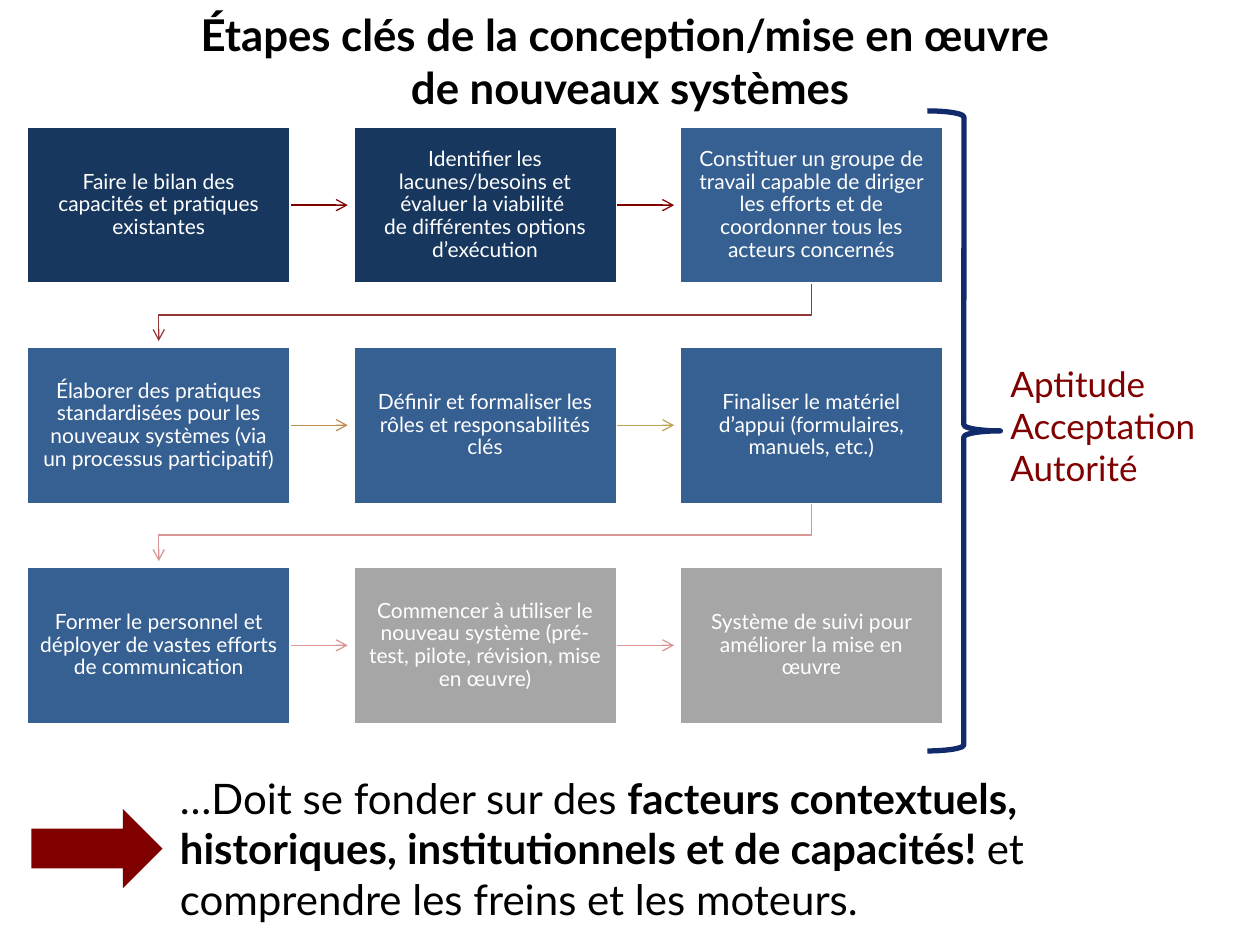
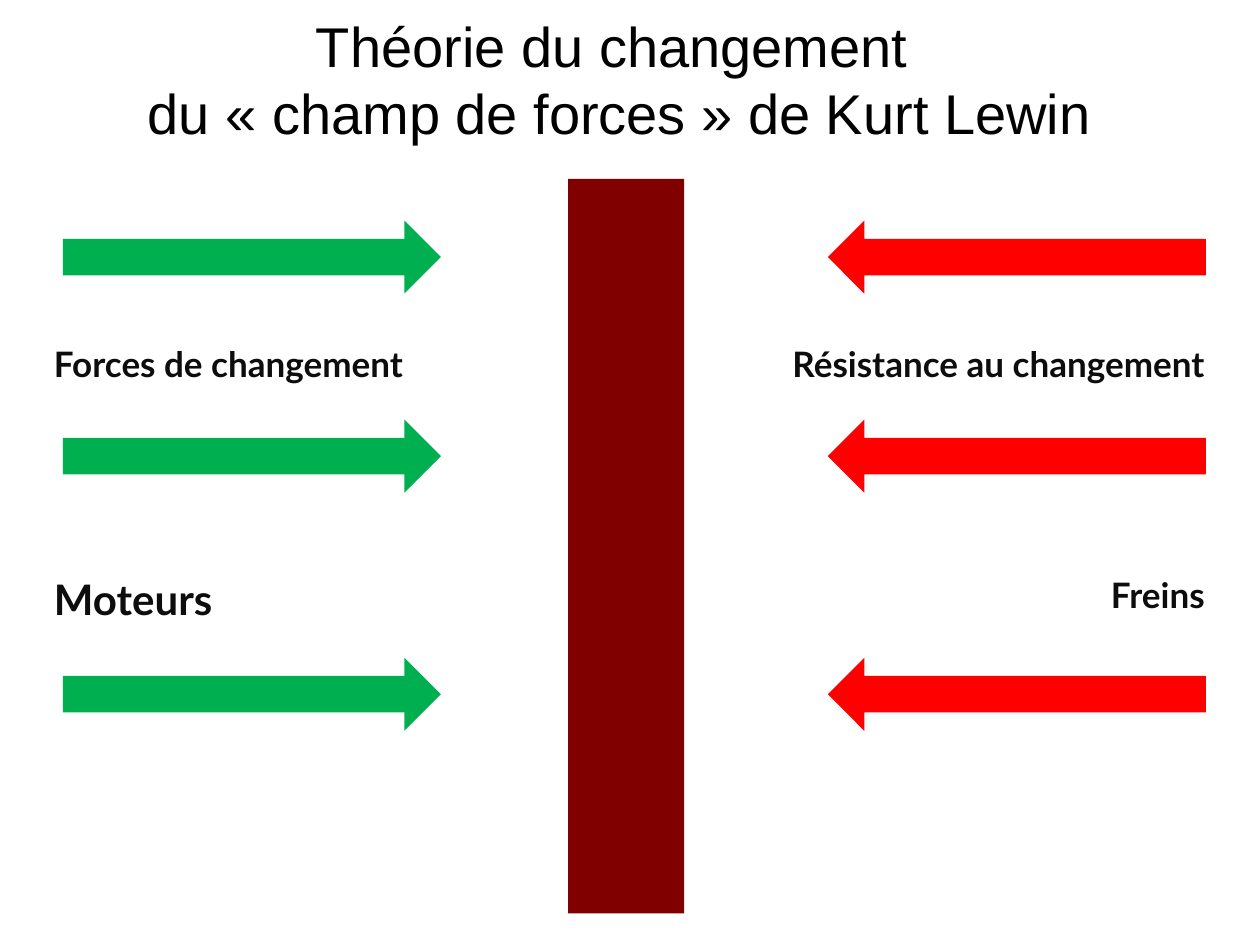
from lxml import etree
from pptx import Presentation
from pptx import util as u
from pptx.dml.color import RGBColor
from pptx.enum import shapes, text
from pptx.oxml.ns import qn

# Slide grid: 10 columns by 7.5 rows, one inch each
COLS, ROWS = 10, 7.5
BODY_FONT, TITLE_FONT = "Lato", "Arial"
MAROON, NAVY, BLUE, GREY = "800000", "17375E", "376092", "A6A6A6"
GREEN, RED, WHITE, BLACK, INK = "00B050", "FF0000", "FFFFFF", "000000", "0D0D0D"
BRACE_BLUE, BRICK, ROSE, OCHRE, SAND = "102A6C", "953735", "D99694", "BE9152", "BDA554"
SHAPE = shapes.MSO_SHAPE
ALIGN = text.PP_ALIGN

# Steps in reading order: wording, box colour, colour of the arrow that follows
STEPS = [
    ("Faire le bilan des capacités et pratiques existantes", NAVY, MAROON),
    ("Identifier les lacunes/besoins et évaluer la viabilité \v"
     "de différentes options d’exécution", NAVY, MAROON),
    ("Constituer un groupe de travail capable de diriger les efforts et de "
     "coordonner tous les acteurs concernés", BLUE, BRICK),
    ("Élaborer des pratiques standardisées pour les nouveaux systèmes "
     "(via un processus participatif)", BLUE, OCHRE),
    ("Définir et formaliser les rôles et responsabilités clés", BLUE, SAND),
    ("Finaliser le matériel d’appui (formulaires, manuels, etc.)", BLUE, ROSE),
    ("Former le personnel et déployer de vastes efforts de communication", BLUE, ROSE),
    ("Commencer à utiliser le nouveau système "
     "(pré-test, pilote, révision, mise en œuvre)", GREY, ROSE),
    ("Système de suivi pour améliorer la mise en œuvre", GREY, None),
]


def rgb(value):
    return RGBColor.from_string(value)


def inches(*lengths):
    return [u.Inches(length) for length in lengths]


def format_text(tf, size, color, font=BODY_FONT, bold=False, align=ALIGN.LEFT):
    tf.word_wrap = True
    for p in tf.paragraphs:
        p.alignment = align
        for r in p.runs:
            r.font.size, r.font.name, r.font.bold = u.Pt(size), font, bold
            r.font.color.rgb = rgb(color)


def add_title(s, box, wording, size, font, bold=False):
    sp = s.shapes.title
    sp.left, sp.top, sp.width, sp.height = inches(*box)
    tf = sp.text_frame
    tf.text = wording
    tf.auto_size = text.MSO_AUTO_SIZE.NONE
    tf.vertical_anchor = text.MSO_ANCHOR.MIDDLE
    format_text(tf, size, BLACK, font, bold, ALIGN.CENTER)


def add_filled(s, kind, box, fill):
    sp = s.shapes.add_shape(kind, *inches(*box))
    sp.shadow.inherit = False
    sp.fill.solid()
    sp.fill.fore_color.rgb = rgb(fill)
    sp.line.fill.background()
    return sp


def add_text(s, box, wording, size, color, **style):
    sp = s.shapes.add_textbox(*inches(*box))
    sp.text_frame.text = wording
    format_text(sp.text_frame, size, color, **style)
    return sp


def style_arrow(sp, color):
    sp.line.color.rgb = rgb(color)
    sp.line.width = u.Pt(0.75)
    etree.SubElement(sp.line._get_or_add_ln(), qn("a:tailEnd"), type="arrow")


def add_step(s, box, wording, fill):
    sp = add_filled(s, SHAPE.RECTANGLE, box, fill)
    sp.line.color.rgb = rgb(WHITE)
    sp.line.width = u.Pt(2)
    tf = sp.text_frame
    tf.text = wording
    tf.vertical_anchor = text.MSO_ANCHOR.MIDDLE
    tf.margin_left = tf.margin_right = tf.margin_top = tf.margin_bottom = u.Inches(0.09)
    tf.paragraphs[0].line_spacing = 0.9
    format_text(tf, 12, WHITE, align=ALIGN.CENTER)
    return sp


def add_next_arrow(s, step, length, color):
    """Straight arrow from the right side of a step."""
    y = step.top + step.height // 2
    x = step.left + step.width
    cx = s.shapes.add_connector(shapes.MSO_CONNECTOR.STRAIGHT, x, y, x + u.Inches(length), y)
    cx.begin_connect(step, 3)
    etree.SubElement(cx._element.spPr, qn("a:effectLst"))
    style_arrow(cx, color)


def add_return_arrow(s, start, end_x, drop, color):
    """Bent arrow from the bottom of a row to the first step of the next one."""
    x, y = start
    bend = y + drop * 0.54
    fb = s.shapes.build_freeform(u.Inches(x), u.Inches(y))
    fb.add_line_segments([inches(x, bend), inches(end_x, bend), inches(end_x, y + drop)],
                         close=False)
    sp = fb.convert_to_shape()
    sp.shadow.inherit = False
    sp.fill.background()
    style_arrow(sp, color)


def add_step_flow(s, box, columns=3, gap=0.49, arrow=0.45):
    left, top, width, height = box
    rows = len(STEPS) // columns
    w = (width - gap * (columns - 1)) / columns
    h = (height - gap * (rows - 1)) / rows
    for i, (wording, fill, arrow_color) in enumerate(STEPS):
        row, col = divmod(i, columns)
        x, y = left + col * (w + gap), top + row * (h + gap)
        step = add_step(s, (x, y, w, h), wording, fill)
        if arrow_color and col < columns - 1:
            add_next_arrow(s, step, arrow, arrow_color)
        elif arrow_color:
            add_return_arrow(s, (x + w / 2, y + h), left + w / 2, arrow, arrow_color)


def add_conditions(s, box):
    """Brace beside the flow and the three conditions it leads to."""
    left, top, width, height = box
    brace = s.shapes.add_shape(SHAPE.RIGHT_BRACE, *inches(left, top, 0.58, height))
    brace.shadow.inherit = False
    brace.fill.background()
    brace.line.color.rgb = rgb(BRACE_BLUE)
    brace.line.width = u.Pt(3)
    add_text(s, (left + 0.56, top + 1.95, width - 0.56, 1.11),
             "Aptitude\nAcceptation\nAutorité", 20, MAROON)


def add_conclusion(s, box):
    left, top, width, height = box
    add_filled(s, SHAPE.RIGHT_ARROW, (left, top + 0.34, 1.04, 0.63), MAROON)
    sp = add_text(s, (left + 1.08, top, width - 1.08, height),
                  "…Doit se fonder sur des ", 24, BLACK)
    p = sp.text_frame.paragraphs[0]
    for wording in ("facteurs contextuels, historiques, institutionnels et de capacités! ",
                    "et comprendre les freins et les moteurs."):
        p.add_run().text = wording
    format_text(sp.text_frame, 24, BLACK)
    p.runs[1].font.bold = True


def add_force_side(s, box, kind, color, labels, label_box, align):
    """Three arrows pushing towards the wall, with a label above the last two."""
    left, top, width, height = box
    for offset in (0, 1.58, 3.47):
        add_filled(s, kind, (left, top + offset, width, height), color)
    label_left, label_width = label_box
    for (wording, size), offset in zip(labels, (0.92, 2.75)):
        add_text(s, (label_left, top + offset, label_width, 0.44), wording, size, INK,
                 bold=True, align=align)


def steps_slide(s):
    add_title(s, (0, 0.17, COLS, 0.62),
              "Étapes clés de la conception/mise en œuvre \vde nouveaux systèmes",
              25, BODY_FONT, bold=True)
    add_step_flow(s, (0.21, 1, 7.28, 4.75))
    add_conditions(s, (7.36, 0.88, COLS - 7.36, 5.08))
    add_conclusion(s, (0.25, 6.08, 9.32, 1.31))


def forces_slide(s):
    add_title(s, (0.17, 0, 9.5, ROWS / 6),
              "Théorie du changement \vdu « champ de forces » de Kurt Lewin", 32, TITLE_FONT)
    add_force_side(s, (0.5, 1.75, 3, 0.58), SHAPE.RIGHT_ARROW, GREEN,
                   [("Forces de changement", 20), ("Moteurs", 24)], (0.33, 3.4), ALIGN.LEFT)
    add_force_side(s, (6.57, 1.75, 3, 0.58), SHAPE.LEFT_ARROW, RED,
                   [("Résistance au changement", 20), ("Freins", 20)], (5.33, 4.33), ALIGN.RIGHT)
    # Wall between the two sides
    add_filled(s, SHAPE.RECTANGLE, (4.51, 1.42, 0.92, 5.83), MAROON)


def main():
    prs = Presentation()
    prs.slide_width, prs.slide_height = inches(COLS, ROWS)
    title_only = prs.slide_layouts[5]
    for build in (steps_slide, forces_slide):
        build(prs.slides.add_slide(title_only))
    prs.save("out.pptx")


if __name__ == "__main__":
    main()
